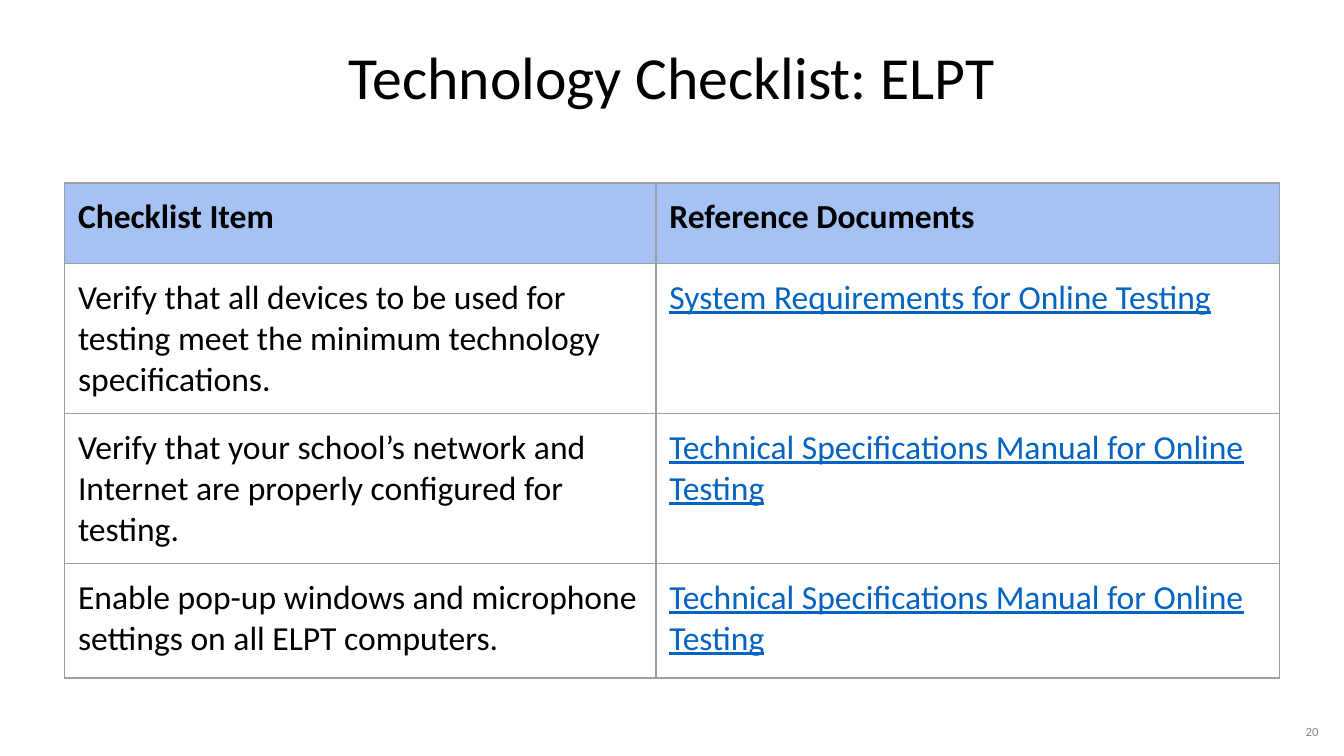
from lxml.etree import SubElement
from pptx import Presentation
from pptx.dml.color import RGBColor
from pptx.enum.text import MSO_ANCHOR, PP_ALIGN
from pptx.oxml.ns import qn
from pptx.util import Pt

BLACK = RGBColor(0x00, 0x00, 0x00)
GREY = RGBColor(0x88, 0x88, 0x88)
LINK_BLUE = RGBColor(0x05, 0x63, 0xC1)
HEADER_BLUE = RGBColor(0xA4, 0xC2, 0xF4)
BORDER_GREY = RGBColor(0x9E, 0x9E, 0x9E)

FONT = "Calibri"
CELL_MARGIN = 7.2
COLUMN_WIDTHS = [316.8, 334.2]
ROW_HEIGHTS = [43.2, 80.4, 80.4, 61.2]
MANUAL = "Technical Specifications Manual for Online Testing"
ROWS = [
    ("Checklist Item", "Reference Documents"),
    ("Verify that all devices to be used for testing meet the minimum technology specifications.",
     "System Requirements for Online Testing"),
    ("Verify that your school’s network and Internet are properly configured for testing.", MANUAL),
    ("Enable pop-up windows and microphone settings on all ELPT computers.", MANUAL),
]


def add_run(paragraph, text, size, color=BLACK, bold=False, underline=False):
    run = paragraph.add_run()
    run.text = text
    run.font.name = FONT
    run.font.size = Pt(size)
    run.font.bold = bold
    run.font.underline = underline
    run.font.color.rgb = color


def set_margins(target, horizontal, vertical):
    target.margin_left = target.margin_right = Pt(horizontal)
    target.margin_top = target.margin_bottom = Pt(vertical)


def set_title(slide, text):
    title = slide.shapes.title
    title.left, title.top, title.width, title.height = Pt(49.7), Pt(3.6), Pt(620.6), Pt(78.5)
    frame = title.text_frame
    frame.word_wrap = True
    frame.vertical_anchor = MSO_ANCHOR.MIDDLE
    set_margins(frame, 7.2, 7.2)
    paragraph = frame.paragraphs[0]
    paragraph.alignment = PP_ALIGN.CENTER
    paragraph.line_spacing = 0.9
    add_run(paragraph, text, 32)


def add_page_number(slide, text):
    box = slide.shapes.add_textbox(Pt(535.7), Pt(378), Pt(175.7), Pt(27.4))
    frame = box.text_frame
    frame.word_wrap = True
    frame.vertical_anchor = MSO_ANCHOR.MIDDLE
    set_margins(frame, 5, 2.9)
    paragraph = frame.paragraphs[0]
    paragraph.alignment = PP_ALIGN.RIGHT
    add_run(paragraph, text, 6.8, GREY)


def set_borders(cell):
    properties = cell._tc.get_or_add_tcPr()
    for side in ("a:lnL", "a:lnR", "a:lnT", "a:lnB"):
        line = SubElement(properties, qn(side), w=str(Pt(0.75)))
        fill = SubElement(line, qn("a:solidFill"))
        SubElement(fill, qn("a:srgbClr"), val=str(BORDER_GREY))


def format_cell(cell, text, is_header, is_link):
    set_margins(cell, CELL_MARGIN, CELL_MARGIN)
    set_borders(cell)
    if is_header:
        cell.fill.solid()
        cell.fill.fore_color.rgb = HEADER_BLUE
    else:
        cell.fill.background()
    color = LINK_BLUE if is_link else BLACK
    add_run(cell.text_frame.paragraphs[0], text, 18, color, is_header, is_link)


def add_checklist(slide):
    frame = slide.shapes.add_table(len(ROWS), len(COLUMN_WIDTHS), Pt(34.6), Pt(98),
                                   Pt(sum(COLUMN_WIDTHS)), Pt(sum(ROW_HEIGHTS)))
    table = frame.table
    table.horz_banding = False
    for column, width in zip(table.columns, COLUMN_WIDTHS):
        column.width = Pt(width)
    for row_index, (row, height) in enumerate(zip(table.rows, ROW_HEIGHTS)):
        row.height = Pt(height)
        is_header = row_index == 0
        for column_index, text in enumerate(ROWS[row_index]):
            is_link = column_index == 1 and not is_header
            format_cell(table.cell(row_index, column_index), text, is_header, is_link)


def main():
    presentation = Presentation()
    presentation.slide_width = Pt(720)
    presentation.slide_height = Pt(405)
    slide = presentation.slides.add_slide(presentation.slide_layouts[5])
    add_page_number(slide, "20")
    set_title(slide, "Technology Checklist: ELPT")
    add_checklist(slide)
    presentation.save("out.pptx")


if __name__ == "__main__":
    main()
